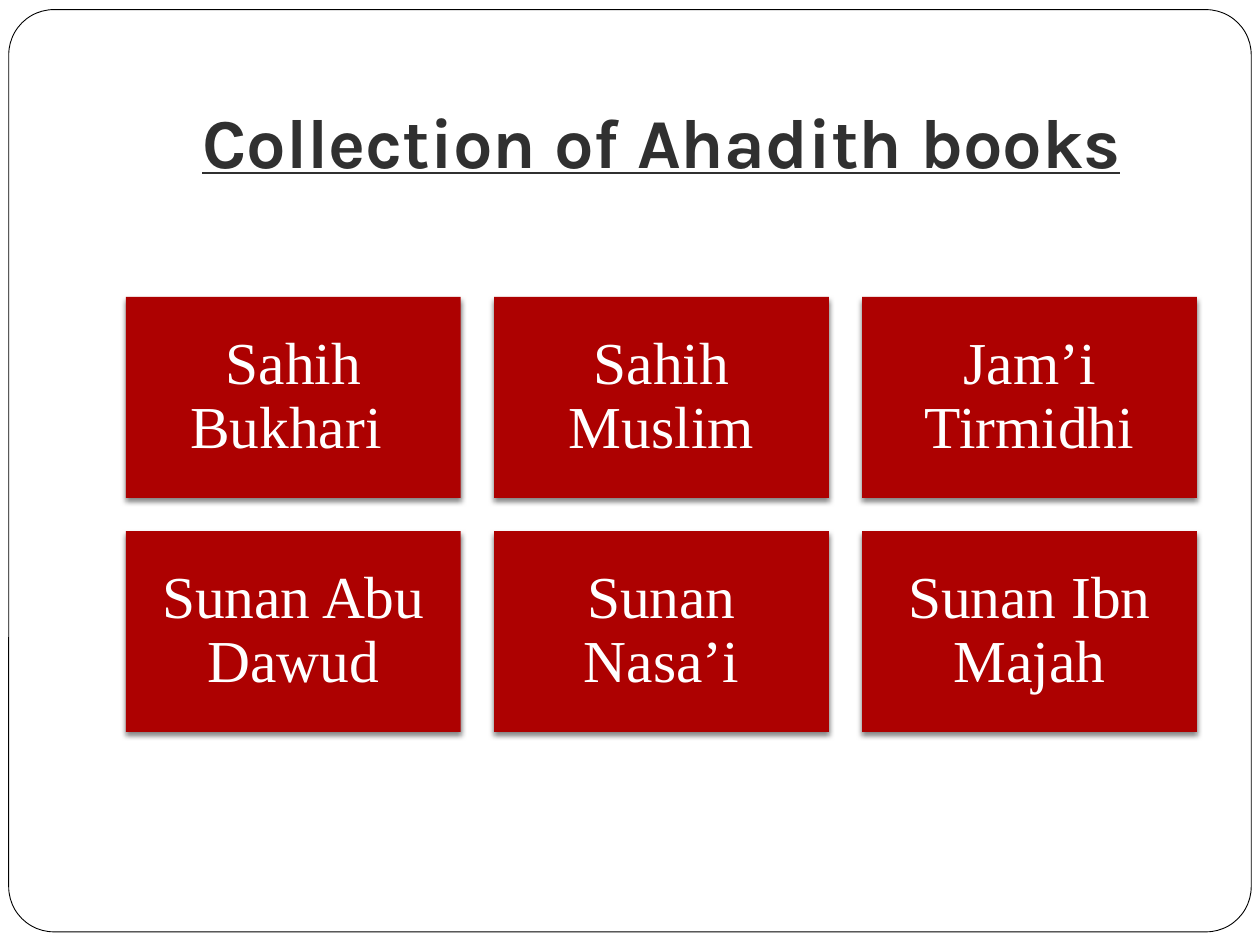
from lxml import etree
from pptx import Presentation
from pptx.dml.color import RGBColor
from pptx.enum.shapes import MSO_SHAPE
from pptx.enum.text import MSO_ANCHOR, MSO_AUTO_SIZE, PP_ALIGN
from pptx.oxml.ns import qn
from pptx.util import Pt

RECTANGLE = MSO_SHAPE.RECTANGLE
ROUNDED = MSO_SHAPE.ROUNDED_RECTANGLE
CENTER = PP_ALIGN.CENTER
MIDDLE, BOTTOM = MSO_ANCHOR.MIDDLE, MSO_ANCHOR.BOTTOM
NO_AUTOFIT = MSO_AUTO_SIZE.NONE

TITLE_LAYOUT = 5
COLUMNS = 3
BOOKS = [
    "Sahih Bukhari ", "Sahih Muslim", "Jam’i Tirmidhi",
    "Sunan Abu Dawud", "Sunan Nasa’i", "Sunan Ibn Majah",
]


def color(hex_value):
    """Return the colour for a hex string."""
    return RGBColor.from_string(hex_value)


def write_text(shape, text, *, font, size, ink, anchor, insets,
               bold=False, underline=False, line_spacing=1.0):
    """Fill a shape with one centred, formatted paragraph."""
    frame = shape.text_frame
    frame.auto_size = NO_AUTOFIT
    frame.word_wrap = True
    frame.vertical_anchor = anchor
    (frame.margin_left, frame.margin_top,
     frame.margin_right, frame.margin_bottom) = map(Pt, insets)
    paragraph = frame.paragraphs[0]
    paragraph.alignment = CENTER
    paragraph.line_spacing = line_spacing
    run = paragraph.add_run()
    run.text = text
    run.font.name = font
    run.font.size = Pt(size)
    run.font.bold = bold
    run.font.underline = underline
    run.font.color.rgb = color(ink)


def add_drop_shadow(shape, hex_value, *, opacity, blur, distance):
    """Cast a soft shadow straight down from a shape."""
    shape.shadow.inherit = False
    effects = shape._element.spPr.find(qn("a:effectLst"))
    shadow = etree.SubElement(
        effects, qn("a:outerShdw"), blurRad=str(Pt(blur)),
        dist=str(Pt(distance)), dir="5400000", rotWithShape="0")
    tint = etree.SubElement(shadow, qn("a:srgbClr"), val=hex_value)
    etree.SubElement(tint, qn("a:alpha"), val=str(opacity * 1000))


def add_frame(slide, left, top, width, height):
    """Draw the rounded page border behind everything else."""
    border = slide.shapes.add_shape(
        ROUNDED, Pt(left), Pt(top), Pt(width), Pt(height))
    border.adjustments[0] = 0.049
    border.shadow.inherit = False
    border.fill.solid()
    border.fill.fore_color.rgb = color("FFFFFF")
    border.line.color.rgb = color("000000")
    border.line.width = Pt(0.5)
    slide.shapes.title._element.addprevious(border._element)


def add_title(slide, left, top, width, height):
    """Place and format the slide title."""
    title = slide.shapes.title
    title.left, title.top = Pt(left), Pt(top)
    title.width, title.height = Pt(width), Pt(height)
    write_text(title, "Collection of Ahadith books", font="Karla", size=40,
               ink="303030", anchor=BOTTOM, insets=(7.2, 3.6, 7.2, 7.2),
               bold=True, underline=True)


def add_book_grid(slide, left, top, width, height, gap=19):
    """Lay the books out as equal tiles filling the given box."""
    rows = len(BOOKS) // COLUMNS
    tile_width = (width - gap * (COLUMNS - 1)) / COLUMNS
    tile_height = (height - gap * (rows - 1)) / rows
    for index, book in enumerate(BOOKS):
        row, column = divmod(index, COLUMNS)
        tile = slide.shapes.add_shape(
            RECTANGLE,
            Pt(left + column * (tile_width + gap)),
            Pt(top + row * (tile_height + gap)),
            Pt(tile_width), Pt(tile_height))
        tile.fill.solid()
        tile.fill.fore_color.rgb = color("AD0101")
        tile.line.fill.background()
        add_drop_shadow(tile, "000000", opacity=50, blur=3, distance=2)
        write_text(tile, book, font="Times New Roman", size=34, ink="FFFFFF",
                   anchor=MIDDLE, insets=(10, 10, 10, 10), line_spacing=0.9)


def main():
    """Build and save the slide."""
    deck = Presentation()
    deck.slide_width, deck.slide_height = Pt(720), Pt(540)
    slide = deck.slides.add_slide(deck.slide_layouts[TITLE_LAYOUT])
    add_frame(slide, 5, 5.5, 710, 527)
    add_title(slide, 72, 21.6, 612, 90)
    add_book_grid(slide, 72, 169.7, 612, 248.6)
    deck.save("out.pptx")


if __name__ == "__main__":
    main()
